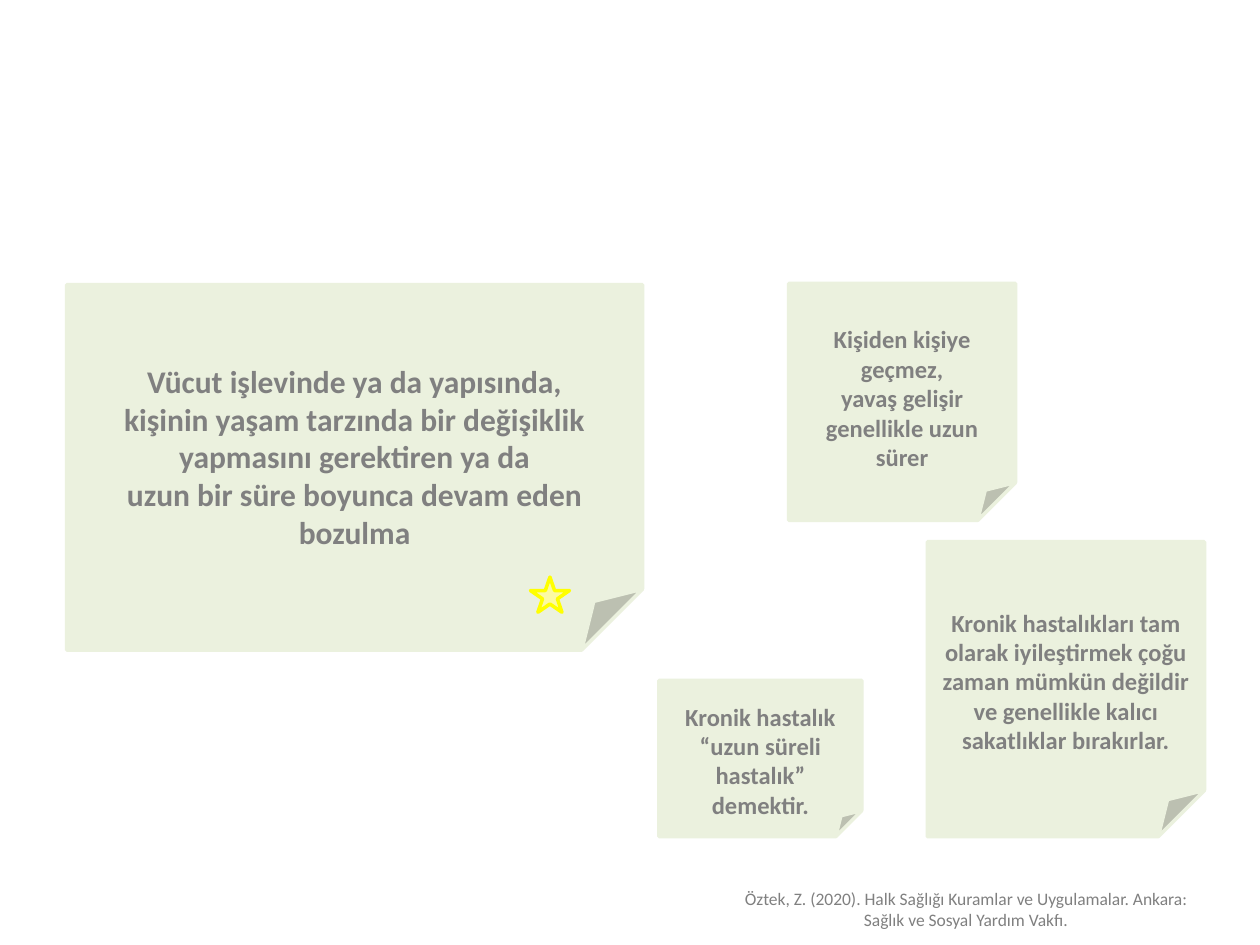
from dataclasses import dataclass

from pptx import Presentation
from pptx.dml.color import RGBColor
from pptx.enum.shapes import MSO_SHAPE
from pptx.enum.text import MSO_ANCHOR, PP_ALIGN
from pptx.util import Inches, Pt

FOLDED_CORNER = MSO_SHAPE.FOLDED_CORNER
STAR = MSO_SHAPE.STAR_5_POINT
MIDDLE = MSO_ANCHOR.MIDDLE
CENTER = PP_ALIGN.CENTER
BLANK_LAYOUT = 6


@dataclass(frozen=True)
class Theme:
    font: str = "Calibri"
    text: RGBColor = RGBColor(0x80, 0x80, 0x80)
    note: RGBColor = RGBColor(0xEB, 0xF1, 0xDE)
    star_fill: RGBColor = RGBColor(0xFC, 0xFA, 0xA4)
    star_line: RGBColor = RGBColor(0xFF, 0xFF, 0x00)
    line_width: float = 2
    large: int = 18
    medium: int = 14
    small: int = 10
    line_spacing: float = 1.22


@dataclass(frozen=True)
class Box:
    left: float
    top: float
    width: float
    height: float

    def lengths(self) -> tuple:
        return tuple(map(Inches, (self.left, self.top, self.width, self.height)))


@dataclass(frozen=True)
class Note:
    box: Box
    size: int
    lines: tuple[str, ...]


THEME = Theme()

NOTES = (
    Note(Box(0.53, 2.26, 4.57, 2.9), THEME.large, (
        "Vücut işlevinde ya da yapısında,",
        "kişinin yaşam tarzında bir değişiklik yapmasını gerektiren ya da",
        "uzun bir süre boyunca devam eden bozulma",
    )),
    Note(Box(5.23, 5.4, 1.61, 1.24), THEME.medium, (
        "Kronik hastalık “uzun süreli hastalık”",
        "demektir.",
    )),
    Note(Box(7.36, 4.3, 2.2, 2.34), THEME.medium, (
        "Kronik hastalıkları tam olarak iyileştirmek çoğu zaman mümkün "
        "değildir ve genellikle kalıcı sakatlıklar bırakırlar.",
    )),
    Note(Box(6.26, 2.25, 1.8, 1.88), THEME.medium, (
        "Kişiden kişiye geçmez,",
        "yavaş gelişir",
        "genellikle uzun sürer",
    )),
)
STAR_BOX = Box(4.21, 4.58, 0.31, 0.28)
SOURCE_BOX = Box(5.71, 6.9, 3.86, 0.6)
SOURCE = ("Öztek, Z. (2020). Halk Sağlığı Kuramlar ve Uygulamalar. Ankara: "
          "Sağlık ve Sosyal Yardım Vakfı.")


def write_lines(frame, lines: tuple[str, ...], size: int, bold: bool) -> None:
    frame.word_wrap = True
    for index, line in enumerate(lines):
        paragraph = frame.add_paragraph() if index else frame.paragraphs[0]
        paragraph.text = line
        paragraph.alignment = CENTER
        font = paragraph.font
        font.name = THEME.font
        font.size = Pt(size)
        font.bold = bold
        font.color.rgb = THEME.text


def add_filled_shape(slide, kind, box: Box, fill: RGBColor, line: RGBColor):
    shape = slide.shapes.add_shape(kind, *box.lengths())
    shape.shadow.inherit = False
    shape.fill.solid()
    shape.fill.fore_color.rgb = fill
    shape.line.color.rgb = line
    shape.line.width = Pt(THEME.line_width)
    return shape


def add_note(slide, note: Note) -> None:
    """Draw a folded note whose text sits half a line below the middle."""
    shape = add_filled_shape(slide, FOLDED_CORNER, note.box, THEME.note, THEME.note)
    frame = shape.text_frame
    frame.vertical_anchor = MIDDLE
    frame.margin_top = Inches(0.05) + Pt(note.size * THEME.line_spacing)
    write_lines(frame, note.lines, note.size, bold=True)


def add_source(slide) -> None:
    frame = slide.shapes.add_textbox(*SOURCE_BOX.lengths()).text_frame
    frame.margin_top = Inches(0.15)
    frame.margin_left = Inches(0.15)
    write_lines(frame, (SOURCE,), THEME.small, bold=False)


def main() -> None:
    presentation = Presentation()
    presentation.slide_width = Inches(10)
    presentation.slide_height = Inches(7.5)
    slide = presentation.slides.add_slide(presentation.slide_layouts[BLANK_LAYOUT])
    for note in NOTES:
        add_note(slide, note)
    add_filled_shape(slide, STAR, STAR_BOX, THEME.star_fill, THEME.star_line)
    add_source(slide)
    presentation.save("out.pptx")


if __name__ == "__main__":
    main()
